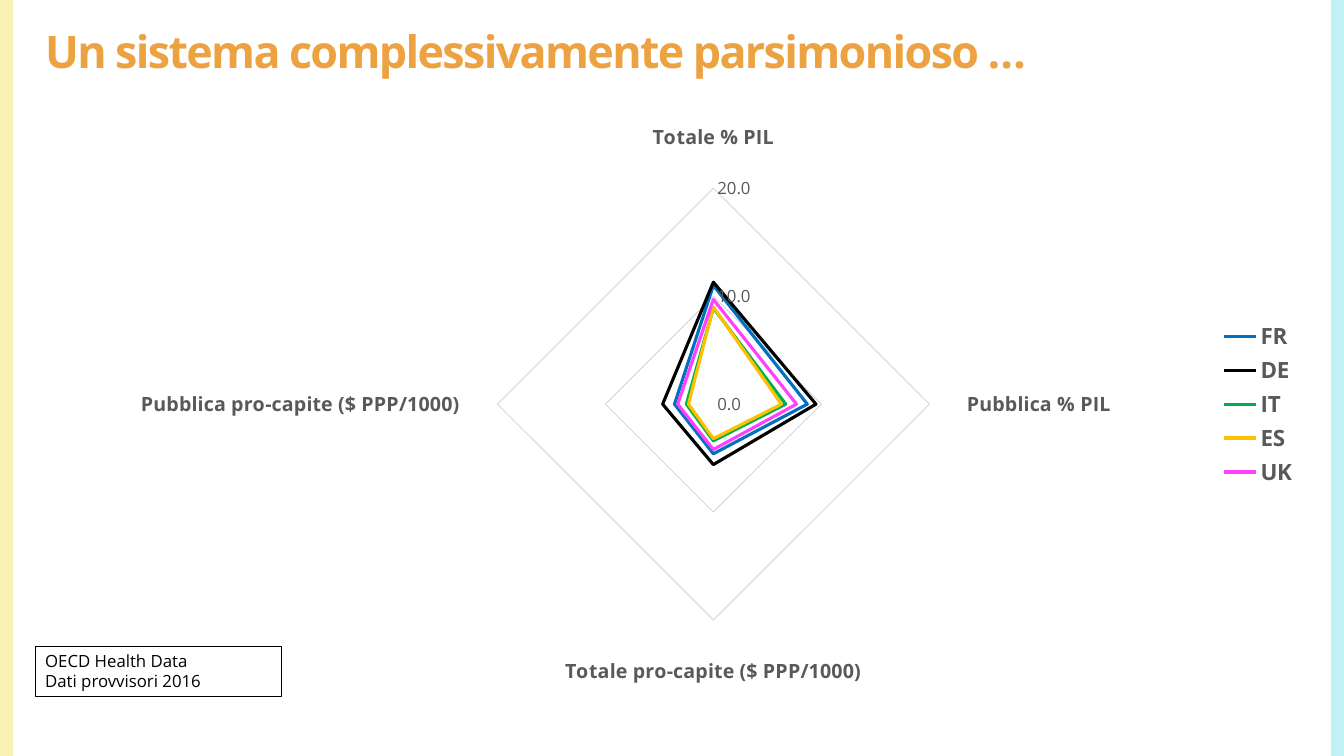
from dataclasses import dataclass

from pptx import Presentation
from pptx import util as u
from pptx.chart.data import CategoryChartData
from pptx.dml.color import RGBColor
from pptx.enum import chart as ch, shapes, text

FONT = "Open Sans"
GREY = "595959"
GRID = "D9D9D9"
SLIDE_W, SLIDE_H = 13.33, 7.5
BAND_W = 0.13
MARGIN = 0.35


@dataclass
class Country:
    name: str
    values: tuple[float, ...]
    color: str


@dataclass
class Band:
    left: float
    color: str


INDICATORS = (
    "Totale % PIL",
    "Pubblica % PIL",
    "Totale pro-capite ($ PPP/1000)",
    "Pubblica pro-capite ($ PPP/1000)",
)
COUNTRIES = (
    Country("FR", (11, 8.7, 4.6, 3.6), "0070C0"),
    Country("DE", (11.3, 9.5, 5.6, 4.7), "000000"),
    Country("IT", (8.9, 6.7, 3.4, 2.5), "00B050"),
    Country("ES", (9, 6.3, 3.2, 2.3), "FFC000"),
    Country("UK", (9.7, 7.7, 4.2, 3.3), "FF40FF"),
)
BANDS = (Band(0, "F7F2B1"), Band(SLIDE_W - BAND_W, "C0F1F4"))


def rgb(color: str) -> RGBColor:
    return RGBColor.from_string(color)


def box(left: float, top: float, width: float, height: float) -> tuple:
    return tuple(u.Inches(length) for length in (left, top, width, height))


def style_font(font, size: float, color: str, bold: bool = False) -> None:
    font.name = FONT
    font.size = u.Pt(size)
    font.bold = bold
    font.color.rgb = rgb(color)


def style_line(line, color: str, width: float) -> None:
    line.color.rgb = rgb(color)
    line.width = u.Pt(width)


def draw_band(slide, band: Band) -> None:
    strip = slide.shapes.add_shape(
        shapes.MSO_SHAPE.RECTANGLE, *box(band.left, 0, BAND_W, SLIDE_H))
    strip.shadow.inherit = False
    strip.fill.solid()
    strip.fill.fore_color.rgb = rgb(band.color)
    strip.line.fill.background()


def draw_title(slide, wording: str) -> None:
    title = slide.shapes.add_textbox(*box(MARGIN, 0.15, 11.8, 0.77)).text_frame
    title.word_wrap = True
    title.vertical_anchor = text.MSO_ANCHOR.MIDDLE
    title.text = wording
    heading = title.paragraphs[0]
    heading.line_spacing = 0.9
    for run in heading.runs:
        style_font(run.font, 32, "EDA242", bold=True)
        run.font._element.set("spc", "-120")


def draw_spending_radar(slide) -> None:
    spending = CategoryChartData(number_format="0.0")
    spending.categories = INDICATORS
    for country in COUNTRIES:
        spending.add_series(country.name, country.values)
    radar = slide.shapes.add_chart(
        ch.XL_CHART_TYPE.RADAR, *box(MARGIN, 1.11, 12.62, 5.8), spending).chart
    radar.has_title = False
    style_font(radar.font, 10, "000000")

    # Legend
    radar.has_legend = True
    radar.legend.position = ch.XL_LEGEND_POSITION.RIGHT
    radar.legend.include_in_layout = False
    style_font(radar.legend.font, 16, GREY, bold=True)

    # Axes
    indicator_axis, value_axis = radar.category_axis, radar.value_axis
    for axis in (indicator_axis, value_axis):
        axis.major_tick_mark = axis.minor_tick_mark = ch.XL_TICK_MARK.NONE
    indicator_axis.has_major_gridlines = False
    style_font(indicator_axis.tick_labels.font, 14, GREY, bold=True)
    style_line(indicator_axis.format.line, GRID, 0.75)
    value_axis.minimum_scale = 0
    value_axis.maximum_scale = 20
    value_axis.major_unit = 10
    value_axis.has_major_gridlines = True
    style_line(value_axis.major_gridlines.format.line, GRID, 0.75)
    value_axis.format.line.fill.background()
    style_font(value_axis.tick_labels.font, 12, GREY)
    value_axis.tick_labels.number_format = "#,##0.0_ ;\\-#,##0.0\\ "
    value_axis.tick_labels.number_format_is_linked = False

    # Country outlines
    plot = radar.plots[0]
    plot.vary_by_categories = False
    for series, country in zip(plot.series, COUNTRIES):
        series.smooth = False
        series.marker.style = ch.XL_MARKER_STYLE.NONE
        style_line(series.format.line, country.color, 2.25)


def draw_data_note(slide, wording: str) -> None:
    note = slide.shapes.add_shape(
        shapes.MSO_SHAPE.RECTANGLE, *box(MARGIN, 6.41, 2.44, 0.5))
    note.shadow.inherit = False
    note.fill.background()
    style_line(note.line, "000000", 0.75)
    frame = note.text_frame
    frame.word_wrap = True
    frame.auto_size = text.MSO_AUTO_SIZE.SHAPE_TO_FIT_TEXT
    frame.vertical_anchor = text.MSO_ANCHOR.TOP
    frame.text = wording
    for paragraph in frame.paragraphs:
        paragraph.alignment = text.PP_ALIGN.LEFT
        for run in paragraph.runs:
            style_font(run.font, 12, "000000")


def main() -> None:
    deck = Presentation()
    deck.slide_width = u.Inches(SLIDE_W)
    deck.slide_height = u.Inches(SLIDE_H)
    slide = deck.slides.add_slide(deck.slide_layouts[6])
    for band in BANDS:
        draw_band(slide, band)
    draw_title(slide, "Un sistema complessivamente parsimonioso …")
    draw_spending_radar(slide)
    draw_data_note(slide, "OECD Health Data\nDati provvisori 2016")
    deck.save("out.pptx")


if __name__ == "__main__":
    main()
